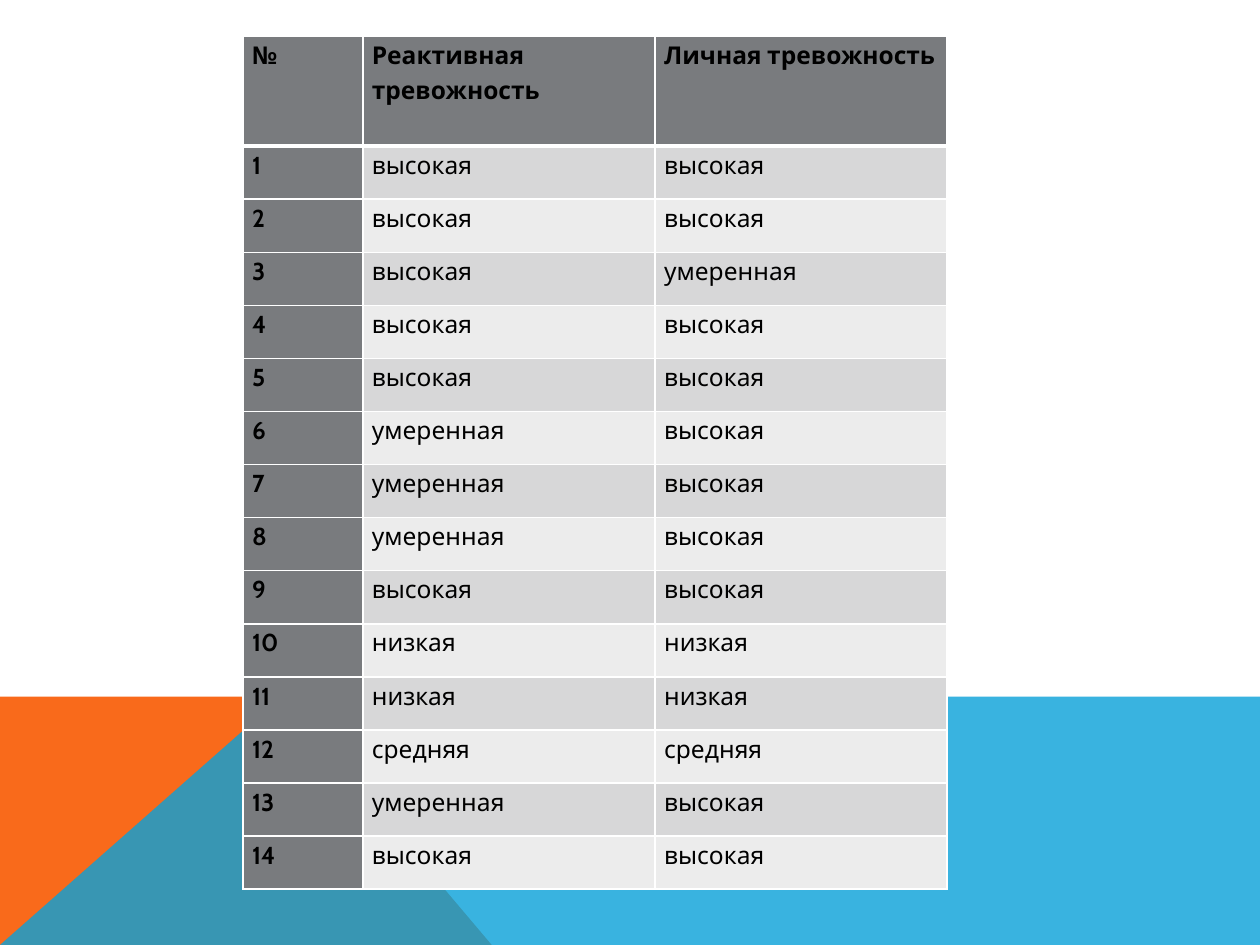
from typing import NamedTuple

from lxml.etree import SubElement as Sub
from pptx import Presentation
from pptx.dml.color import RGBColor as Rgb
from pptx.enum.text import PP_ALIGN as Align
from pptx.oxml.ns import qn
from pptx.util import Pt

COLORS = {
    "orange": "F96A1B",
    "blue": "08A1D9",
    "head": "797B7E",
    "dark": "D7D7D8",
    "light": "ECECEC",
    "line": "FFFFFF",
    "text": "000000",
}
FONT = "Cabin"
WIDE, HIGH = 720, 540
LEFT, TOP = 138.9, 20.9
COLS = (68.4, 167, 167)
HEAD_H, ROW_H = 62.6, 30.35


class Band(NamedTuple):
    points: tuple[tuple[float, float], ...]
    color: str
    alpha: int = 100


class Level(NamedTuple):
    state: str
    trait: str


BANDS = (
    Band(((0, HIGH), (0, 397.6), (160.6, 397.6), (281.4, HIGH)), "orange"),
    Band(((0, HIGH), (160.6, 397.6), (WIDE, 397.9), (WIDE, HIGH)), "blue", 80),
)
HEADS = ("№", "Реактивная тревожность", "Личная тревожность")
HI, MID, LOW, AVG = "высокая", "умеренная", "низкая", "средняя"
LEVELS = (
    Level(HI, HI),
    Level(HI, HI),
    Level(HI, MID),
    Level(HI, HI),
    Level(HI, HI),
    Level(MID, HI),
    Level(MID, HI),
    Level(MID, HI),
    Level(HI, HI),
    Level(LOW, LOW),
    Level(LOW, LOW),
    Level(AVG, AVG),
    Level(MID, HI),
    Level(HI, HI),
)


def paint(fill, color: str) -> None:
    fill.solid()
    fill.fore_color.rgb = Rgb.from_string(COLORS[color])


def draw_band(slide, band: Band) -> None:
    first, *rest = band.points
    pen = slide.shapes.build_freeform(*first, scale=Pt(1))
    pen.add_line_segments(rest, close=True)
    shape = pen.convert_to_shape()
    shape.shadow.inherit = False
    shape.line.fill.background()
    paint(shape.fill, band.color)
    if band.alpha < 100:
        tint = shape.fill._xPr.find(".//" + qn("a:srgbClr"))
        Sub(tint, qn("a:alpha"), val=str(band.alpha * 1000))


def write(frame, text: str, *, size: float = 14, bold: bool = False,
          color: str = "text") -> None:
    para = frame.paragraphs[0]
    para.alignment = Align.JUSTIFY
    para.line_spacing = 1.15
    run = para.add_run()
    run.text = text
    font = run.font
    font.name, font.size, font.bold = FONT, Pt(size), bold
    font.color.rgb = Rgb.from_string(COLORS[color])


def edge(cell, **widths: float) -> None:
    """Add cell borders, given in the order L, R, T, B."""
    props = cell._tc.get_or_add_tcPr()
    for side, width in widths.items():
        line = Sub(props, qn(f"a:ln{side}"), w=str(Pt(width)))
        fill = Sub(line, qn("a:solidFill"))
        Sub(fill, qn("a:srgbClr"), val=COLORS["line"])


def draw_cell(cell, text: str, row: int, col: int) -> None:
    cell.margin_left = cell.margin_right = Pt(5.2)
    cell.margin_top = cell.margin_bottom = 0
    edge(cell, L=1, R=1, T=3 if row == 1 else 1, B=1 if row else 3)
    main = row == 0 or col == 0
    paint(cell.fill, "head" if main else "dark" if row % 2 else "light")
    write(cell.text_frame, text, bold=main)


def draw_table(slide) -> None:
    rows = [HEADS] + [(str(n), *lev) for n, lev in enumerate(LEVELS, 1)]
    high = HEAD_H + ROW_H * len(LEVELS)
    table = slide.shapes.add_table(
        len(rows), len(COLS), Pt(LEFT), Pt(TOP), Pt(sum(COLS)), Pt(high)
    ).table
    table.first_col = True
    for col, width in zip(table.columns, COLS):
        col.width = Pt(width)
    for i, texts in enumerate(rows):
        table.rows[i].height = Pt(ROW_H if i else HEAD_H)
        for j, text in enumerate(texts):
            draw_cell(table.cell(i, j), text, i, j)


def main() -> None:
    deck = Presentation()
    deck.slide_width, deck.slide_height = Pt(WIDE), Pt(HIGH)
    slide = deck.slides.add_slide(deck.slide_layouts[6])
    for band in BANDS:
        draw_band(slide, band)
    draw_table(slide)
    deck.save("out.pptx")


if __name__ == "__main__":
    main()
